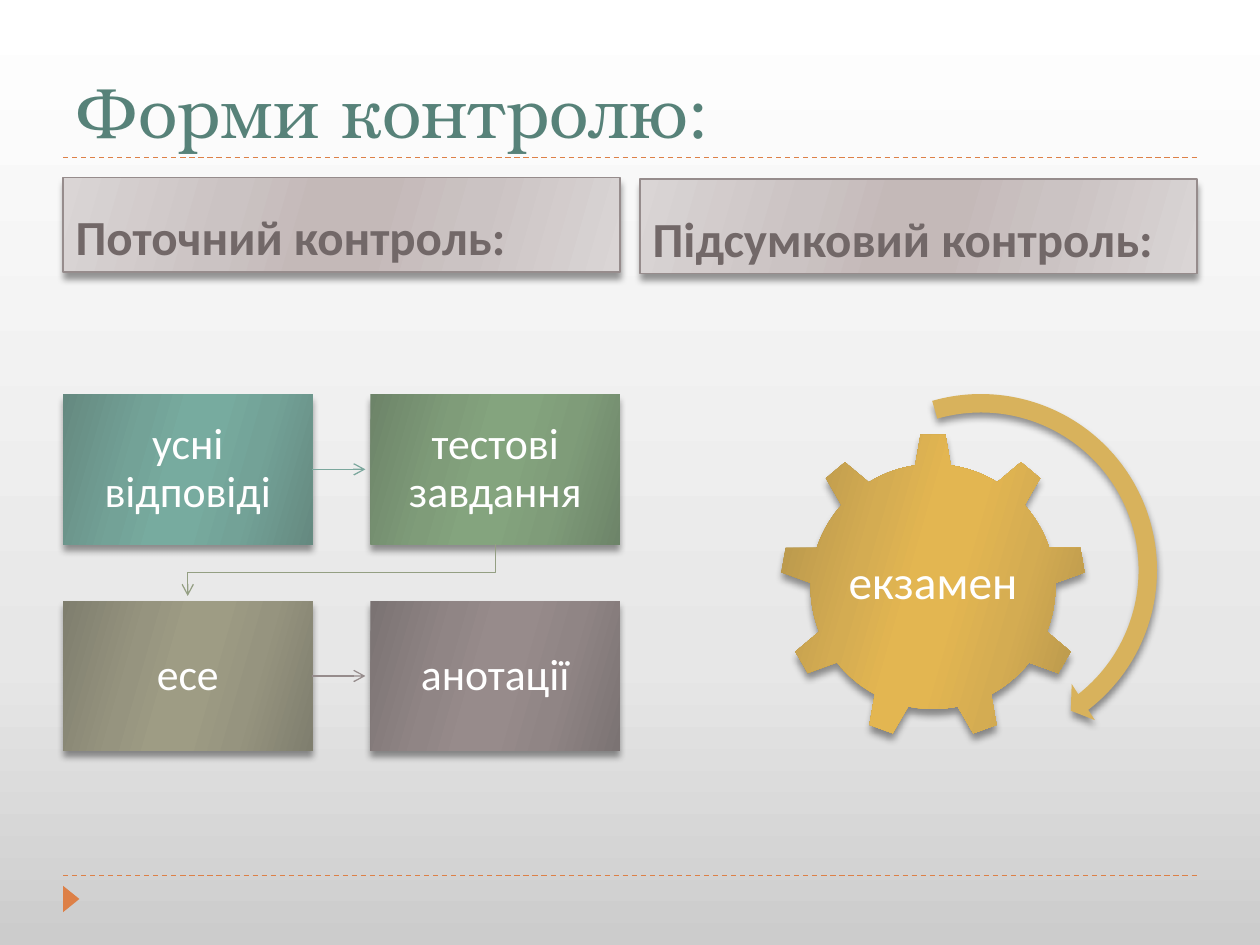
from lxml.etree import SubElement
from pptx import Presentation
from pptx.dml.color import RGBColor
from pptx.enum.dml import MSO_LINE_DASH_STYLE as Dash
from pptx.enum.shapes import MSO_CONNECTOR_TYPE as ConnectorType, MSO_SHAPE as Preset
from pptx.enum.text import MSO_ANCHOR as Anchor, MSO_AUTO_SIZE as AutoSize, PP_ALIGN as Align
from pptx.oxml.ns import qn
from pptx.util import Inches, Pt

COLORS = {
    "title": "578279", "header": "726868", "header_line": "968C8C",
    "white": "FFFFFF", "orange": "DD8047", "arc": "D8B25C", "shadow": "000000",
    "teal_arrow": "7BA79D", "olive_arrow": "949F83", "gray_arrow": "968C8C",
}
GRADIENTS = {
    "header": ("DAD5D5", "CBC3C3", "C4B9B8"),
    "teal": ("658980", "73A297", "77AB9F"),
    "green": ("6D8469", "7F9C79", "84A47E"),
    "olive": ("7F7E6E", "96947F", "9E9C84"),
    "gray": ("7B7373", "908585", "978B8B"),
    "gold": ("B1924B", "D4AC52", "E3B651"),
}
BACKGROUND = [(0, "CCCCCC"), (30, "E7E7E7"), (100, "FFFFFF")]
NODE_WIDTH, NODE_HEIGHT = 1.98, 1.19
COLUMNS, ROWS = (0.5, 2.94), (3.13, 4.77)
ARROW_GAP = 0.04


def rgb(name):
    """Return the named colour."""
    return RGBColor.from_string(COLORS[name])


def set_gradient(fill, element, stops, angle):
    """Fill with (percent, hex) stops along a clockwise angle."""
    fill.gradient()
    fill.gradient_angle = 360 - angle
    stop_list = next(element.iter(qn("a:gsLst")))
    for stop in list(stop_list):
        stop_list.remove(stop)
    for position, color in stops:
        stop = SubElement(stop_list, qn("a:gs"), pos=str(position * 1000))
        SubElement(stop, qn("a:srgbClr"), val=color)


def set_sheen(shape, name):
    """Give a shape the symmetric slanted gradient of the theme."""
    edge, middle, center = GRADIENTS[name]
    colors = (edge, middle, center, center, middle, edge)
    stops = zip((0, 30, 45, 55, 73, 100), colors)
    set_gradient(shape.fill, shape.element.spPr, stops, 16)


def set_shadow(shape):
    """Give a shape a soft shadow below it."""
    shape.shadow.inherit = False
    effects = shape.element.spPr.find(qn("a:effectLst"))
    shadow = SubElement(effects, qn("a:outerShdw"), blurRad=str(Pt(4)), dist=str(Pt(3.4)),
                        dir="5400000", algn="ctr", rotWithShape="0")
    color = SubElement(shadow, qn("a:srgbClr"), val=COLORS["shadow"])
    SubElement(color, qn("a:alpha"), val="40000")


def write_text(shape, text, size, color, font="Calibri", bold=False, align=Align.CENTER,
               anchor=Anchor.MIDDLE, inset=None, spacing=None):
    """Put one formatted paragraph into a shape."""
    frame = shape.text_frame
    frame.word_wrap = True
    frame.auto_size = AutoSize.NONE
    frame.vertical_anchor = anchor
    if inset is not None:
        frame.margin_left = frame.margin_right = Inches(inset)
        frame.margin_top = frame.margin_bottom = Inches(inset)
    paragraph = frame.paragraphs[0]
    paragraph.alignment = align
    paragraph.line_spacing = spacing
    run = paragraph.add_run()
    run.text = text
    run.font.name, run.font.size, run.font.bold = font, Pt(size), bold
    run.font.color.rgb = rgb(color)


def place(shape, left, top, width, height):
    """Move and size a placeholder."""
    shape.left, shape.top = Inches(left), Inches(top)
    shape.width, shape.height = Inches(width), Inches(height)


def add_preset(slide, preset, left, top, width, height):
    """Add a preset shape without outline or shadow."""
    shape = slide.shapes.add_shape(preset, Inches(left), Inches(top), Inches(width), Inches(height))
    shape.line.fill.background()
    shape.shadow.inherit = False
    return shape


def add_block(slide, preset, box, gradient, text, size, inset):
    """Add a shaded shape with a white label."""
    shape = add_preset(slide, preset, *box)
    set_sheen(shape, gradient)
    set_shadow(shape)
    write_text(shape, text, size, "white", inset=inset, spacing=0.9)


def style_line(line, color, arrow):
    """Set the colour and width of a line and its optional arrowhead."""
    line.color.rgb = rgb(color)
    line.width = Pt(0.75)
    if arrow:
        SubElement(line._get_or_add_ln(), qn("a:tailEnd"), type="arrow")


def add_line(slide, start, end, color, arrow=False):
    """Add a straight line, dashed unless it is an arrow."""
    points = [Inches(value) for value in (*start, *end)]
    connector = slide.shapes.add_connector(ConnectorType.STRAIGHT, *points)
    if not arrow:
        connector.line.dash_style = Dash.DASH
    style_line(connector.line, color, arrow)
    SubElement(connector.element.spPr, qn("a:effectLst"))


def add_bent_arrow(slide, points, color):
    """Add an arrow that turns at the given points."""
    start, *rest = [(Inches(x), Inches(y)) for x, y in points]
    builder = slide.shapes.build_freeform(*start)
    builder.add_line_segments(rest, close=False)
    shape = builder.convert_to_shape()
    shape.fill.background()
    shape.shadow.inherit = False
    style_line(shape.line, color, True)


def add_decoration(slide):
    """Add the background, the dashed rules and the corner marker."""
    set_gradient(slide.background.fill, slide.element, BACKGROUND, 270)
    for y in (6.95, 1.25):
        add_line(slide, (0.5, y), (9.5, y), "orange")
    marker = add_preset(slide, Preset.ISOSCELES_TRIANGLE, 0.46, 7.07, 0.21, 0.13)
    marker.rotation = 90
    marker.fill.solid()
    marker.fill.fore_color.rgb = rgb("orange")


def add_headings(slide):
    """Fill the title and both column headers."""
    holders = {holder.placeholder_format.idx: holder for holder in slide.placeholders}
    for index in (2, 4):
        holders[index].element.getparent().remove(holders[index].element)
    place(holders[0], 0.5, 0.44, 9, 0.87)
    write_text(holders[0], "Форми контролю:", 40, "title", font="TeX Gyre Bonum", align=Align.LEFT)
    headers = ((1, 0.5, 1.41, "Поточний контроль:"), (3, 5.08, 1.42, "Підсумковий контроль:"))
    for index, left, top, text in headers:
        header = holders[index]
        place(header, left, top, 4.42, 0.75)
        set_sheen(header, "header")
        style_line(header.line, "header_line", False)
        set_shadow(header)
        write_text(header, text, 28, "header", bold=True, align=Align.LEFT, anchor=Anchor.BOTTOM)


def add_process(slide):
    """Add the four steps of current control and their arrows."""
    steps = (("усні відповіді", "teal"), ("тестові завдання", "green"),
             ("есе", "olive"), ("анотації", "gray"))
    for index, (text, gradient) in enumerate(steps):
        row, column = divmod(index, 2)
        box = (COLUMNS[column], ROWS[row], NODE_WIDTH, NODE_HEIGHT)
        add_block(slide, Preset.RECTANGLE, box, gradient, text, 25, 0.19)
    for top, color in zip(ROWS, ("teal_arrow", "gray_arrow")):
        y = top + NODE_HEIGHT / 2
        add_line(slide, (COLUMNS[0] + NODE_WIDTH, y), (COLUMNS[1] - ARROW_GAP, y), color, arrow=True)
    left, right = (column + NODE_WIDTH / 2 for column in COLUMNS)
    bottom = ROWS[0] + NODE_HEIGHT
    middle = (bottom + ROWS[1]) / 2
    bends = ((right, bottom), (right, middle), (left, middle), (left, ROWS[1] - ARROW_GAP))
    add_bent_arrow(slide, bends, "olive_arrow")


def add_exam(slide):
    """Add the gear of final control and the arrow around it."""
    add_block(slide, Preset.GEAR_9, (6.19, 3.44, 2.43, 2.43), "gold", "екзамен", 27, 0.04)
    arc = add_preset(slide, Preset.CIRCULAR_ARROW, 6.29, 3.03, 2.99, 2.99)
    for index, value in enumerate((0.049, 3.126, 31.313, 152.369, 0.057)):
        arc.adjustments[index] = value
    arc.fill.solid()
    arc.fill.fore_color.rgb = rgb("arc")
    set_shadow(arc)


def main():
    """Build the slide and save it."""
    presentation = Presentation()
    presentation.slide_width, presentation.slide_height = Inches(10), Inches(7.5)
    slide = presentation.slides.add_slide(presentation.slide_layouts[4])
    add_decoration(slide)
    add_headings(slide)
    add_process(slide)
    add_exam(slide)
    presentation.save("out.pptx")


if __name__ == "__main__":
    main()
